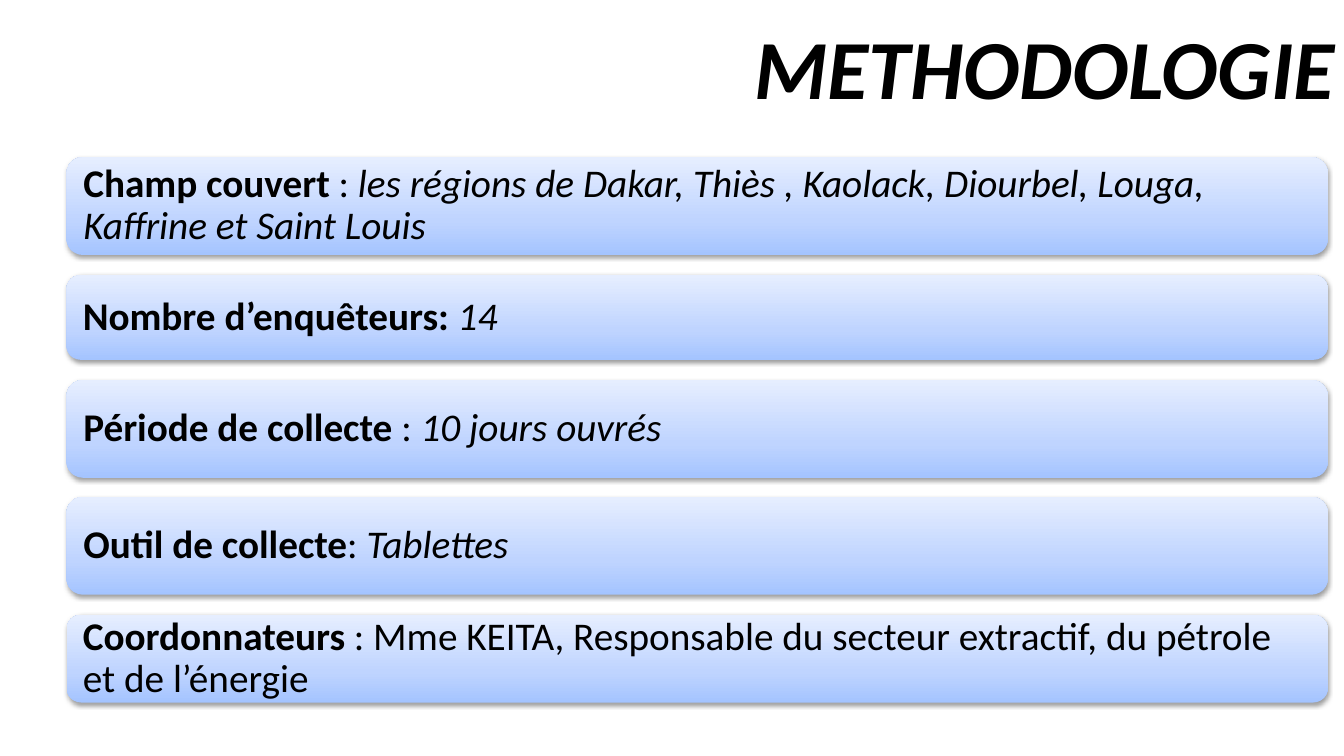
from lxml import etree
from pptx import Presentation
from pptx import util as u
from pptx.dml.color import RGBColor
from pptx.enum import shapes, text
from pptx.oxml import ns

PX = 9144
BLACK = RGBColor(0x00, 0x00, 0x00)
DEEP = RGBColor(0xA4, 0xC4, 0xFF)
MID = RGBColor(0xBF, 0xD4, 0xFF)
PALE = RGBColor(0xE6, 0xEE, 0xFF)
STOPS = [(0, DEEP), (35, MID), (100, PALE)]

PLAIN = {}
BOLD = {"bold": True}
ITAL = {"italic": True}

BARS = [
    (156, 97, [("Champ couvert ", BOLD), (": ", PLAIN),
               ("les régions de Dakar, Thiès , Kaolack, Diourbel, Louga, "
                "Kaffrine et Saint Louis", ITAL)]),
    (273, 84, [("Nombre d’enquêteurs: ", BOLD), ("14", ITAL)]),
    (377, 97, [("Période de collecte ", BOLD), (": ", PLAIN),
               ("10 jours ouvrés", ITAL)]),
    (493, 97, [("Outil de collecte", BOLD), (": ", PLAIN),
               ("Tablettes", ITAL)]),
    (610, 87, [("Coordonnateurs", BOLD),
               (" : Mme KEITA, Responsable du secteur extractif, "
                "du pétrole et de l’énergie", PLAIN)]),
]


class Deck:
    """Holds the style and the current slide, and draws each kind of element."""

    font = "Calibri"

    def __init__(self, wide, high):
        self.file = Presentation()
        self.file.slide_width = u.Emu(wide * PX)
        self.file.slide_height = u.Emu(high * PX)
        self.slide = self.file.slides.add_slide(self.file.slide_layouts[5])

    def label(self, frame, runs, size, align, inset, lead):
        frame.word_wrap = True
        frame.auto_size = text.MSO_AUTO_SIZE.NONE
        frame.vertical_anchor = text.MSO_ANCHOR.MIDDLE
        for side in ("left", "top", "right", "bottom"):
            setattr(frame, "margin_" + side, u.Emu(inset * PX))
        para = frame.paragraphs[0]
        para.alignment = align
        para.line_spacing = lead
        for words, extra in runs:
            run = para.add_run()
            run.text = words
            look = {"name": self.font, "size": u.Pt(size),
                    "bold": False, "italic": False, **extra}
            for key, value in look.items():
                setattr(run.font, key, value)
            run.font.color.rgb = BLACK

    def title(self, words, left, top, wide, high):
        box = self.slide.shapes.title
        place = {"left": left, "top": top, "width": wide, "height": high}
        for key, value in place.items():
            setattr(box, key, u.Emu(value * PX))
        self.label(box.text_frame, [(words, BOLD | ITAL)], 60,
                   text.PP_ALIGN.RIGHT, 10, 1.0)

    def bar(self, runs, left, top, wide, high):
        area = [u.Emu(n * PX) for n in (left, top, wide, high)]
        bar = self.slide.shapes.add_shape(
            shapes.MSO_SHAPE.ROUNDED_RECTANGLE, *area)
        bar.line.fill.background()
        self.shade(bar)
        self.label(bar.text_frame, runs, 28, text.PP_ALIGN.LEFT, 12, 0.9)

    def shade(self, bar):
        space = ns.nsdecls("a")
        stops = "".join(
            f'<a:gs pos="{pos * 1000}"><a:srgbClr val="{tint}"/></a:gs>'
            for pos, tint in STOPS)
        blend = etree.fromstring(
            f'<a:gradFill {space} rotWithShape="1"><a:gsLst>{stops}</a:gsLst>'
            '<a:lin ang="16200000" scaled="0"/></a:gradFill>')
        cast = etree.fromstring(
            f'<a:effectLst {space}><a:outerShdw blurRad="40000" dist="20000" '
            f'dir="5400000" rotWithShape="0"><a:srgbClr val="{BLACK}">'
            '<a:alpha val="38000"/></a:srgbClr></a:outerShdw></a:effectLst>')
        props = bar.element.spPr
        props.find(ns.qn("a:prstGeom")).addnext(blend)
        props.append(cast)


def main():
    deck = Deck(1333, 750)
    deck.title("METHODOLOGIE", 81, 4, 1253, 122)
    for top, high, runs in BARS:
        deck.bar(runs, 66, top, 1251, high)
    deck.file.save("out.pptx")


if __name__ == "__main__":
    main()
